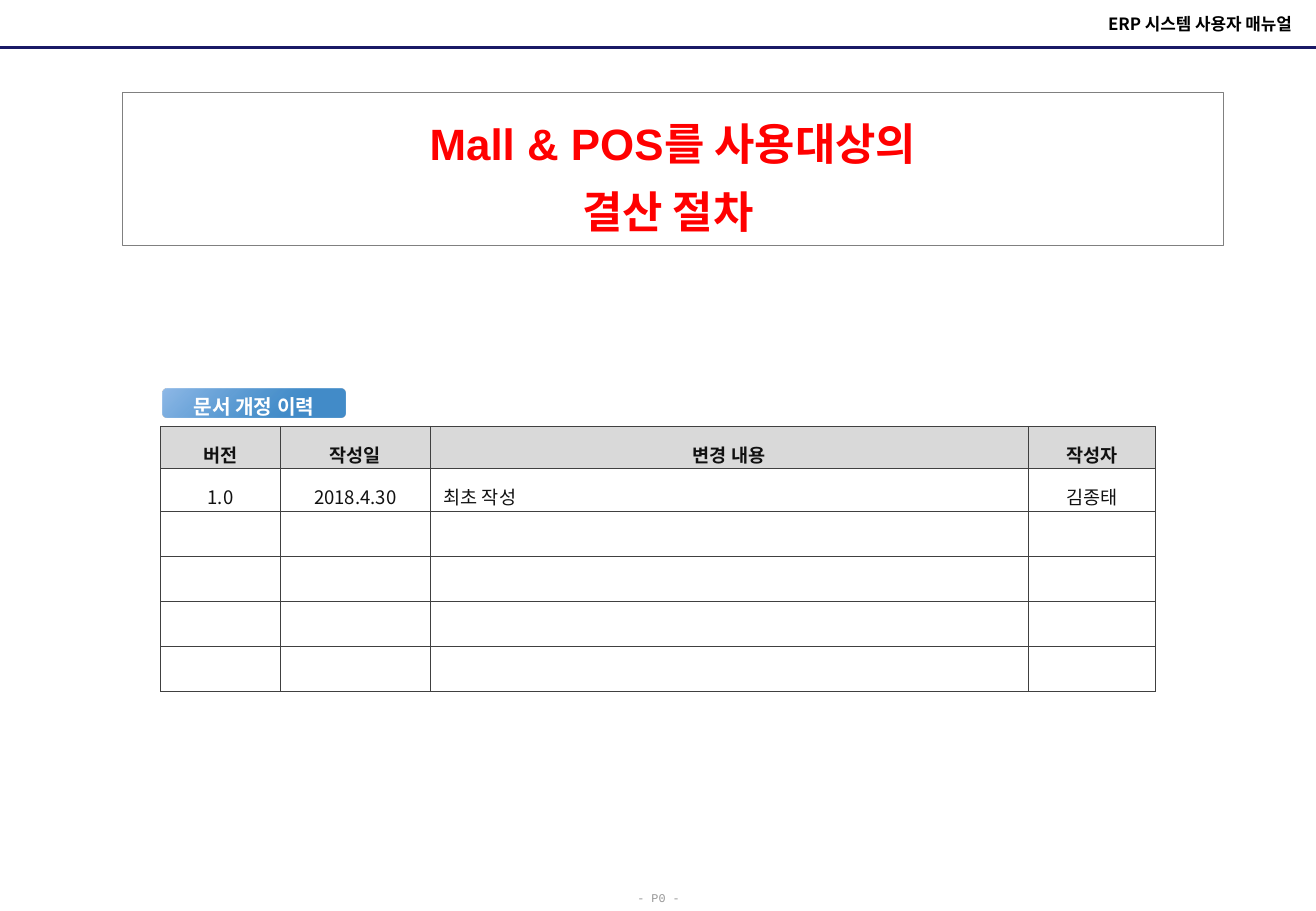
from lxml.etree import SubElement
from pptx import Presentation
from pptx.dml.color import RGBColor
from pptx.enum.shapes import MSO_CONNECTOR as Connector, MSO_SHAPE as Shape
from pptx.enum.text import MSO_ANCHOR as Anchor, PP_ALIGN as Align
from pptx.oxml.ns import qn
from pptx.util import Inches, Pt

COLORS = {
    "navy": "191966", "black": "000000", "red": "FF0000", "white": "FFFFFF",
    "ink": "111111", "footer": "969696", "frame": "808080", "grid": "404040",
    "header": "D9D9D9", "sky": "90BAE8", "blue": "1973BD",
}
KOREAN = "Noto Sans CJK KR"

COLUMN_WIDTHS = [0.99, 1.23, 4.92, 1.05]
ROW_HEIGHTS = [0.35, 0.35] + [0.37] * 4
HISTORY = [
    ["버전", "작성일", "변경 내용", "작성자"],
    ["1.0", "2018.4.30", "최초 작성", "김종태"],
]


def color(name):
    return RGBColor.from_string(COLORS[name])


def add_text(para, text, size, ink, font=KOREAN, bold=False,
             align=Align.CENTER, spacing=None):
    para.alignment = align
    if spacing:
        para.line_spacing = spacing
    span = para.add_run()
    span.text = text
    span.font.size = Pt(size)
    span.font.bold = bold
    span.font.name = font
    span.font.color.rgb = color(ink)
    # Hangul takes the East Asian typeface
    SubElement(span.font._element, qn("a:ea"), typeface=KOREAN)


def add_header(page, left, top, width, height):
    title = page.shapes.title
    title.left, title.top = Inches(left), Inches(top)
    title.width, title.height = Inches(width), Inches(height)
    title.text_frame.vertical_anchor = Anchor.MIDDLE
    add_text(title.text_frame.paragraphs[0], "ERP 시스템 사용자 매뉴얼", 10,
             "black", bold=True, align=Align.RIGHT)
    # Rule across the page
    rule_top = Inches(top + height + 0.06)
    rule = page.shapes.add_connector(
        Connector.STRAIGHT, 0, rule_top, Inches(10.83), rule_top)
    rule.line.color.rgb = color("navy")
    rule.line.width = Pt(1.5)
    SubElement(rule._element.spPr, qn("a:effectLst"))


def add_subject(page, left, top, width, height):
    frame = page.shapes.add_shape(
        Shape.RECTANGLE, Inches(left), Inches(top), Inches(width), Inches(height))
    frame.shadow.inherit = False
    frame.fill.background()
    frame.line.color.rgb = color("frame")
    frame.line.width = Pt(0.75)
    body = frame.text_frame
    body.vertical_anchor = Anchor.MIDDLE
    for para, text in ((body.paragraphs[0], "Mall & POS를 사용대상의"),
                       (body.add_paragraph(), "결산 절차 ")):
        add_text(para, text, 26, "red", font="Arial", bold=True, spacing=1.3)


def add_badge(page, left, top, width, height):
    badge = page.shapes.add_shape(
        Shape.ROUNDED_RECTANGLE, Inches(left), Inches(top), Inches(width), Inches(height))
    badge.shadow.inherit = False
    badge.line.fill.background()
    badge.fill.gradient()
    badge.fill.gradient_angle = 315
    start, end = badge.fill.gradient_stops
    start.color.rgb = color("sky")
    end.color.rgb = color("blue")
    end.position = 0.7
    for tone in badge._element.xpath(".//a:gs[2]/a:srgbClr"):
        SubElement(tone, qn("a:alpha"), val="82000")
    body = badge.text_frame
    body.margin_left = body.margin_right = body.margin_top = 0
    body.margin_bottom = Inches(0.04)
    body.vertical_anchor = Anchor.MIDDLE
    para = body.paragraphs[0]
    add_text(para, "문서 개정 이력", 12, "white", bold=True, spacing=1.5)
    indent = para._p.get_or_add_pPr()
    indent.set("marL", str(Inches(0.1)))
    indent.set("indent", str(Inches(-0.1)))


def add_borders(cell):
    properties = cell._tc.get_or_add_tcPr()
    for side in ("lnL", "lnR", "lnT", "lnB"):
        edge = SubElement(properties, qn(f"a:{side}"), w=str(Pt(0.5)))
        fill = SubElement(edge, qn("a:solidFill"))
        SubElement(fill, qn("a:srgbClr"), val=COLORS["grid"])


def add_history(page, left, top):
    table = page.shapes.add_table(
        len(ROW_HEIGHTS), len(COLUMN_WIDTHS), Inches(left), Inches(top),
        Inches(sum(COLUMN_WIDTHS)), Inches(sum(ROW_HEIGHTS))).table
    table.horz_banding = False
    for column, width in zip(table.columns, COLUMN_WIDTHS):
        column.width = Inches(width)
    for row_index, row in enumerate(table.rows):
        row.height = Inches(ROW_HEIGHTS[row_index])
        is_header = row_index == 0
        for column_index, cell in enumerate(row.cells):
            add_borders(cell)
            cell.vertical_anchor = Anchor.MIDDLE
            cell.margin_left = cell.margin_right = Inches(0.11)
            cell.margin_top = cell.margin_bottom = Inches(0.05)
            if is_header:
                cell.fill.solid()
                cell.fill.fore_color.rgb = color("header")
            else:
                cell.fill.background()
            para = cell.text_frame.paragraphs[0]
            if row_index < len(HISTORY):
                is_note = column_index == 2 and not is_header
                add_text(para, HISTORY[row_index][column_index], 11, "ink",
                         bold=is_header, spacing=1.3,
                         align=Align.LEFT if is_note else Align.CENTER)
            else:
                # Keeps empty rows from growing
                SubElement(para._p, qn("a:endParaRPr"), sz="1100")


def add_footer(page, left, top, width, height):
    footer = page.shapes.add_textbox(
        Inches(left), Inches(top), Inches(width), Inches(height))
    footer.text_frame.word_wrap = False
    add_text(footer.text_frame.paragraphs[0], "- P0 -", 7, "footer",
             font="Courier New", spacing=1.3)


def main():
    deck = Presentation()
    deck.slide_width, deck.slide_height = Inches(10.83), Inches(7.5)
    page = deck.slides.add_slide(deck.slide_layouts[5])
    add_footer(page, 5.14, 7.25, 0.56, 0.25)
    add_header(page, 6.04, 0.06, 4.69, 0.27)
    add_history(page, 1.32, 3.51)
    add_badge(page, 1.34, 3.2, 1.5, 0.24)
    add_subject(page, 1.01, 0.76, 9.06, 1.26)
    deck.save("out.pptx")


if __name__ == "__main__":
    main()
